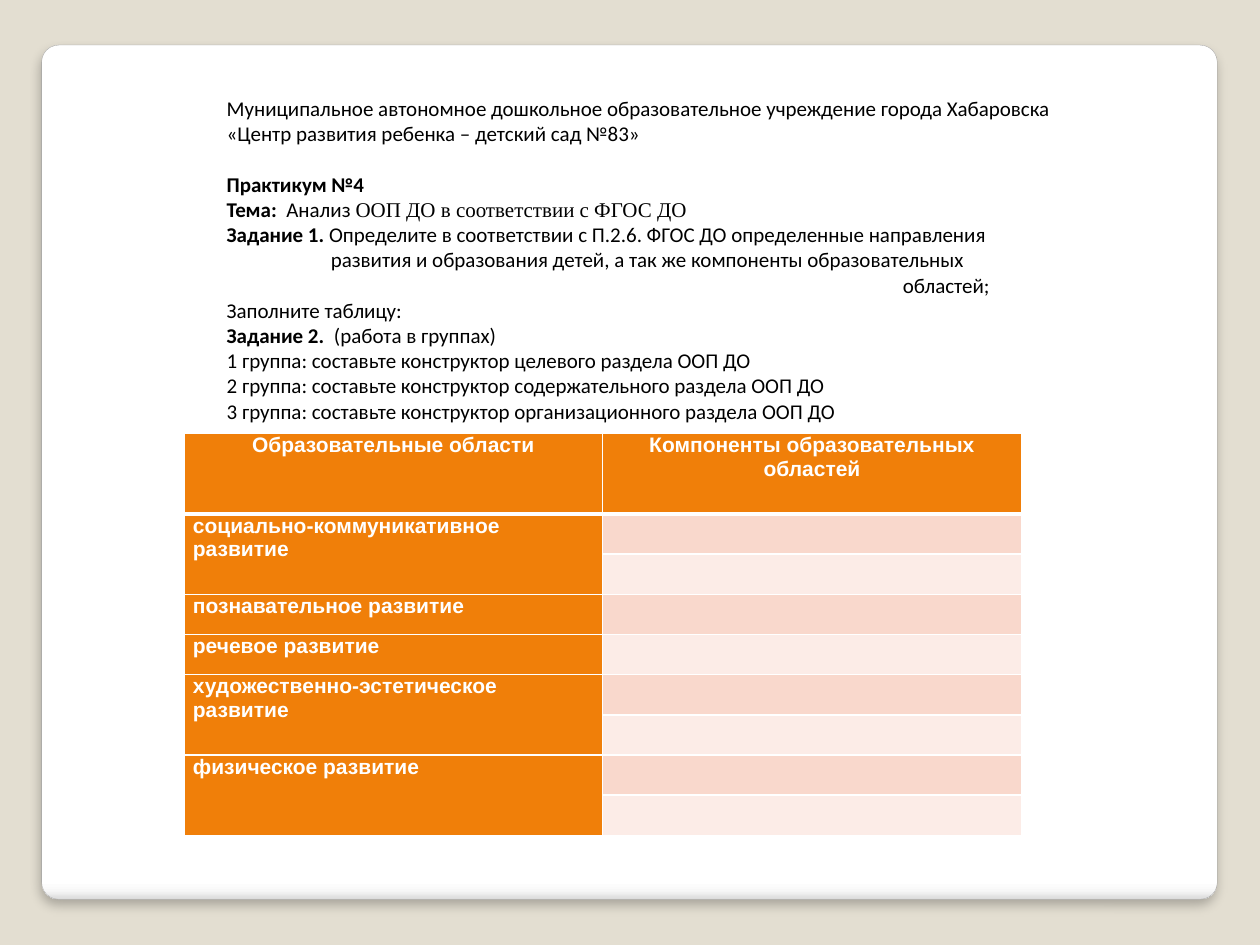
import pptx
import pptx.dml.color
import pptx.enum.shapes
import pptx.enum.text
import pptx.oxml
import pptx.oxml.ns
import pptx.util

Cm, Pt = pptx.util.Cm, pptx.util.Pt
ORANGE, WHITE, BLACK = "F07F09", "FFFFFF", "000000"
BANDS = ["F9D8CC", "FCECE7"]


def paint(fill, tone):
    fill.solid()
    fill.fore_color.rgb = pptx.dml.color.RGBColor.from_string(tone)


def node(text):
    """Parse an XML element whose a: prefix is still undeclared."""
    tag, rest = text.split(" ", 1)
    return pptx.oxml.parse_xml(f"{tag} {pptx.oxml.ns.nsdecls('a')} {rest}")


deck = pptx.Presentation()
deck.slide_width, deck.slide_height = Cm(25.4), Cm(19.05)
slide = deck.slides.add_slide(deck.slide_layouts[6])
paint(slide.background.fill, "E3DED1")

# White panel with a shaded lower edge
panel = slide.shapes.add_shape(
    pptx.enum.shapes.MSO_SHAPE.ROUNDED_RECTANGLE,
    Cm(0.84), Cm(0.91), Cm(23.7), Cm(17.22))
panel.adjustments[0] = 0.02
paint(panel.line.fill, "A4A4A4")
panel.line.width = Pt(0.16)
panel.fill.gradient()
panel.fill.gradient_angle = 270
stops = panel.fill._fill._gradFill.gsLst
for stop in list(stops):
    stops.remove(stop)
for place, tone in [(0, WHITE), (98, WHITE), (99, "F7F7F7"), (100, "DADADA")]:
    stops.append(node(f'<a:gs pos="{place * 1000}"><a:srgbClr val="{tone}"/></a:gs>'))
panel._element.spPr.append(node(
    f'<a:effectLst ><a:outerShdw blurRad="{Pt(6)}" dist="{Pt(4)}" dir="5400000" '
    f'rotWithShape="0"><a:srgbClr val="{BLACK}"><a:alpha val="25000"/></a:srgbClr>'
    '</a:outerShdw></a:effectLst>'))

# Table: area name and the number of component rows it covers
areas = [
    ("социально-коммуникативное развитие", 2),
    ("познавательное развитие", 1),
    ("речевое развитие", 1),
    ("художественно-эстетическое развитие", 2),
    ("физическое развитие", 2),
]
count = 1 + sum(span for name, span in areas)
grid = slide.shapes.add_table(
    count, 2, Cm(3.71), Cm(8.74), Cm(16.88), Cm(8.1)).table
for row in grid.rows:
    row.height = Cm(0.81)
grid.rows[0].height = Cm(1.62)

labels = [(0, 0, "Образовательные области"),
          (0, 1, "Компоненты образовательных областей")]
top = 1
for name, span in areas:
    labels.append((top, 0, name))
    if span > 1:
        grid.cell(top, 0).merge(grid.cell(top + span - 1, 0))
    top += span

pads = {"margin_left": Cm(0.18), "margin_right": Cm(0.18),
        "margin_top": 0, "margin_bottom": 0}
for r in range(count):
    for c in range(2):
        cell = grid.cell(r, c)
        for key, value in pads.items():
            setattr(cell, key, value)
        paint(cell.fill, BANDS[(r - 1) % 2] if r and c else ORANGE)
        for i, side in enumerate("LRTB"):
            thick = (r, side) in [(0, "B"), (1, "T")]
            cell._tc.tcPr.insert(i, node(
                f'<a:ln{side} w="{Pt(3 if thick else 1)}"><a:solidFill>'
                f'<a:srgbClr val="{WHITE}"/></a:solidFill></a:ln{side}>'))

face = {"name": "Arial", "size": Pt(12), "bold": True}
for r, c, text in labels:
    para = grid.cell(r, c).text_frame.paragraphs[0]
    if r == 0:
        para.alignment = pptx.enum.text.PP_ALIGN.CENTER
    run = para.add_run()
    run.text = text
    for key, value in face.items():
        setattr(run.font, key, value)
    paint(run.font.fill, WHITE)

# Task text: space before (pt), indent (cm), then runs of text, bold, font
SANS, SERIF = "Calibri", "Times New Roman"
lines = [
    (0, 0, [("Муниципальное автономное дошкольное образовательное учреждение города Хабаровска", False, SANS)]),
    (0, 0, [("«Центр развития ребенка – детский сад №83»", False, SANS)]),
    (14.5, 0, [("Практикум №4", True, SANS)]),
    (0, 0, [("Тема:  ", True, SANS), ("Анализ ", False, SANS),
            ("ООП ДО в соответствии с ФГОС ДО", False, SERIF)]),
    (0, 0, [("Задание 1.", True, SANS),
            (" Определите в соответствии с П.2.6. ФГОС ДО определенные направления", False, SANS)]),
    (0, 2.1, [("развития и образования детей, а так же компоненты образовательных", False, SANS)]),
    (0, 13.63, [("областей;", False, SANS)]),
    (0, 0, [("Заполните таблицу:", False, SANS)]),
    (0, 0, [("Задание 2.  ", True, SANS), ("(работа в группах)", False, SANS)]),
]
for i, part in enumerate(["целевого", "содержательного", "организационного"], 1):
    lines.append((0, 0, [(f"{i} группа: составьте конструктор {part} раздела ООП ДО", False, SANS)]))

box = slide.shapes.add_textbox(Cm(4.32), Cm(1.8), Cm(17.32), Cm(7.7))
frame = box.text_frame
frame.word_wrap = False
for i, (gap, dent, runs) in enumerate(lines):
    para = frame.add_paragraph() if i else frame.paragraphs[0]
    para.space_before = Pt(gap)
    para._p.get_or_add_pPr().set("marL", str(Cm(dent)))
    for text, bold, font in runs:
        run = para.add_run()
        run.text = text
        for key, value in {"name": font, "size": Pt(12), "bold": bold}.items():
            setattr(run.font, key, value)
        paint(run.font.fill, BLACK)

deck.save("out.pptx")
